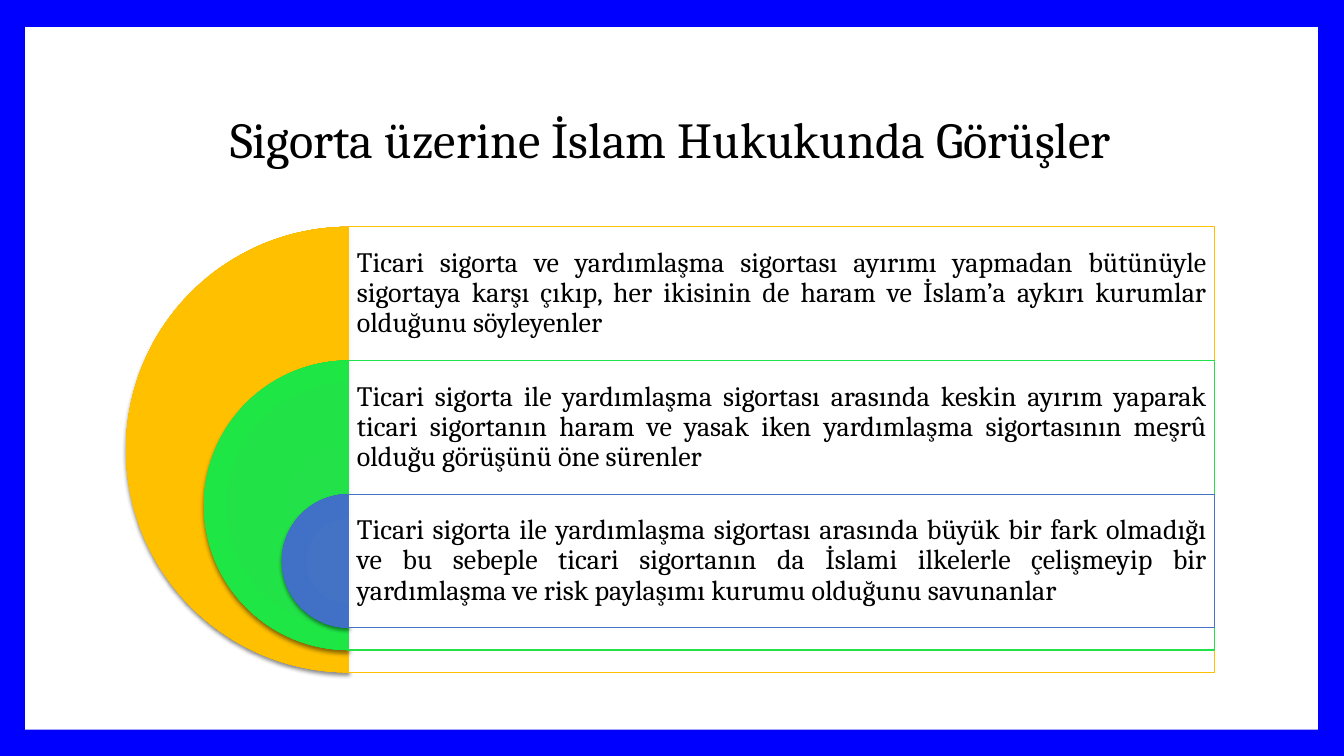
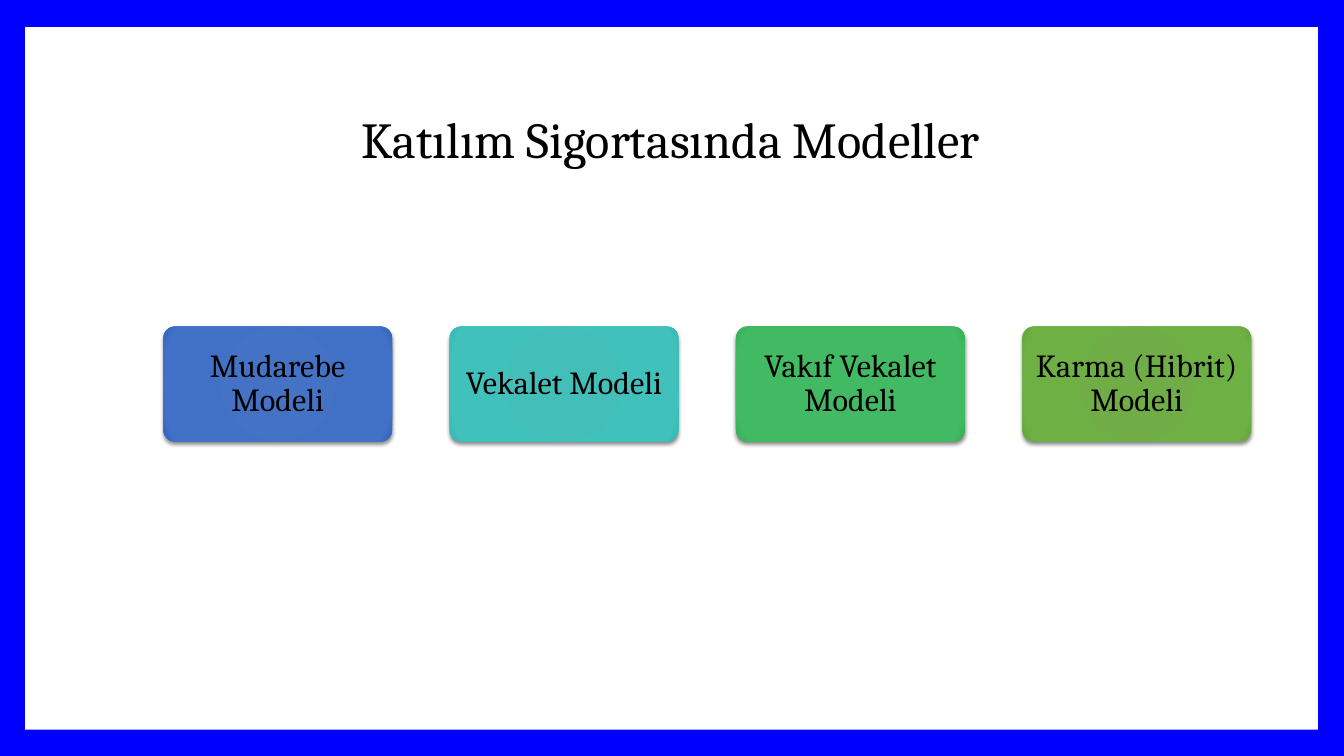
from lxml import etree
from pptx import Presentation
from pptx import util as u
from pptx.dml.color import RGBColor
from pptx.enum import shapes, text
from pptx.oxml import parse_xml
from pptx.oxml.ns import nsdecls, qn

COLORS = {"border": "0000FF", "page": "FFFFFF", "ink": "000000"}
GRADIENTS = {
    "amber": ("FFC000", "FFC000", "E7AE00"),
    "lime": ("23E148", "1EE645", "0EDD37"),
    "blue": ("4472C4", "4171C7", "3264BD"),
    "teal": ("43BEB9", "40C1BC", "32B8B2"),
    "green": ("45B664", "42B963", "34AF56"),
    "olive": ("70AD47", "6FB044", "64A637"),
}
FONT = "Cambria"
VIEWS = [
    ("amber", "Ticari sigorta ve yardımlaşma sigortası ayırımı yapmadan bütünüyle sigortaya "
              "karşı çıkıp, her ikisinin de haram ve İslam’a aykırı kurumlar olduğunu söyleyenler"),
    ("lime", "Ticari sigorta ile yardımlaşma sigortası arasında keskin ayırım yaparak ticari "
             "sigortanın haram ve yasak iken yardımlaşma sigortasının meşrû olduğu görüşünü "
             "öne sürenler"),
    ("blue", "Ticari sigorta ile yardımlaşma sigortası arasında büyük bir fark olmadığı ve bu "
             "sebeple ticari sigortanın da İslami ilkelerle çelişmeyip bir yardımlaşma ve risk "
             "paylaşımı kurumu olduğunu savunanlar"),
]
MODELS = [
    ("blue", "Mudarebe Modeli"),
    ("teal", "Vekalet Modeli"),
    ("green", "Vakıf Vekalet Modeli"),
    ("olive", "Karma (Hibrit) Modeli"),
]


def rgb(value):
    """Return a hex string as a colour."""
    return RGBColor.from_string(value)


def add_box(slide, kind, left, top, width, height, fill):
    """Add a plain filled shape without line or shadow."""
    sp = slide.shapes.add_shape(kind, *map(u.Inches, (left, top, width, height)))
    sp.fill.solid()
    sp.fill.fore_color.rgb = rgb(fill)
    sp.line.fill.background()
    sp.shadow.inherit = False
    return sp


def add_glossy(slide, kind, left, top, width, height, tone):
    """Add a shape with a radial gradient and a soft shadow below it."""
    stops = GRADIENTS[tone]
    sp = add_box(slide, kind, left, top, width, height, stops[0])
    gs = "".join(f'<a:gs pos="{pos}"><a:srgbClr val="{c}"/></a:gs>'
                 for pos, c in zip((0, 90000, 100000), stops))
    grad = parse_xml(
        f'<a:gradFill {nsdecls("a")} rotWithShape="1"><a:gsLst>{gs}</a:gsLst>'
        '<a:path path="circle"><a:fillToRect l="100000" t="100000" r="100000" b="100000"/>'
        '</a:path></a:gradFill>')
    props = sp.element.spPr
    props.replace(props.find(qn("a:solidFill")), grad)
    props.find(qn("a:effectLst")).append(parse_xml(
        f'<a:outerShdw {nsdecls("a")} blurRad="{u.Pt(3)}" dist="{u.Pt(2)}" dir="5400000" '
        'rotWithShape="0"><a:srgbClr val="000000"><a:alpha val="45000"/></a:srgbClr>'
        '</a:outerShdw>'))
    return sp


def write(sp, words, size, align, insets=(0.1, 0.05, 0.1, 0.05)):
    """Write one paragraph, vertically centred within the insets."""
    tf = sp.text_frame
    tf.word_wrap = True
    tf.auto_size = text.MSO_AUTO_SIZE.NONE
    tf.vertical_anchor = text.MSO_ANCHOR.MIDDLE
    tf.margin_left, tf.margin_top, tf.margin_right, tf.margin_bottom = map(u.Inches, insets)
    p = tf.paragraphs[0]
    p.text = words
    p.alignment = align
    p.line_spacing = 0.9
    p.font.size = u.Pt(size)
    p.font.name = FONT
    p.font.color.rgb = rgb(COLORS["ink"])


def add_slide(prs, heading):
    """Add a title-only slide with its heading."""
    slide = prs.slides.add_slide(prs.slide_layouts[5])
    title = slide.shapes.title
    title.left, title.top, title.width, title.height = map(u.Inches, (1.25, 0.67, 10.8, 1.48))
    write(title, heading, 36, text.PP_ALIGN.CENTER)
    return slide


def style_master(prs, slide):
    """Give the master its border colour and the white page inside it."""
    master = prs.slide_master
    master.background.fill.solid()
    master.background.fill.fore_color.rgb = rgb(COLORS["border"])
    page = add_box(slide, shapes.MSO_SHAPE.RECTANGLE, 0.25, 0.27, 12.82, 6.97, COLORS["page"])
    master.shapes.element.insert(2, page.element)


def add_nested_views(slide, views):
    """Draw nested half discs, each with a framed text to its right."""
    center, top, full, width, pad = 3.46, 2.25, 4.42, 8.59, 0.08
    row = full * 0.3
    for i, (tone, words) in enumerate(views):
        size = full * (1 - 0.35 * i)
        y = top + row * i
        disc = add_glossy(slide, shapes.MSO_SHAPE.PIE, center - size / 2, y, size, size, tone)
        disc.adjustments[0], disc.adjustments[1] = 54, 162
        frame = add_box(slide, shapes.MSO_SHAPE.RECTANGLE, center, y, width, size, COLORS["page"])
        color = frame.element.spPr.find(qn("a:solidFill"))[0]
        etree.SubElement(color, qn("a:alpha")).set("val", "90000")
        frame.line.color.rgb = rgb(GRADIENTS[tone][0])
        frame.line.width = u.Pt(0.79)
        write(frame, words, 20, text.PP_ALIGN.JUSTIFY, (pad, pad, pad, size - row + pad))


def add_model_row(slide, models):
    """Draw the models as a row of evenly spaced rounded boxes."""
    left, width, gap = 1.62, 2.27, 0.57
    for i, (tone, words) in enumerate(models):
        box = add_glossy(slide, shapes.MSO_SHAPE.ROUNDED_RECTANGLE,
                         left + i * (width + gap), 3.24, width, 1.14, tone)
        box.adjustments[0] = 0.1
        write(box, words, 23, text.PP_ALIGN.CENTER, (0.05, 0.03, 0.05, 0.03))


def main():
    """Build and save the presentation."""
    prs = Presentation()
    prs.slide_width, prs.slide_height = u.Inches(13.33), u.Inches(7.5)
    views = add_slide(prs, "Sigorta üzerine İslam Hukukunda Görüşler")
    style_master(prs, views)
    add_nested_views(views, VIEWS)
    add_model_row(add_slide(prs, "Katılım Sigortasında Modeller"), MODELS)
    prs.save("out.pptx")


if __name__ == "__main__":
    main()
